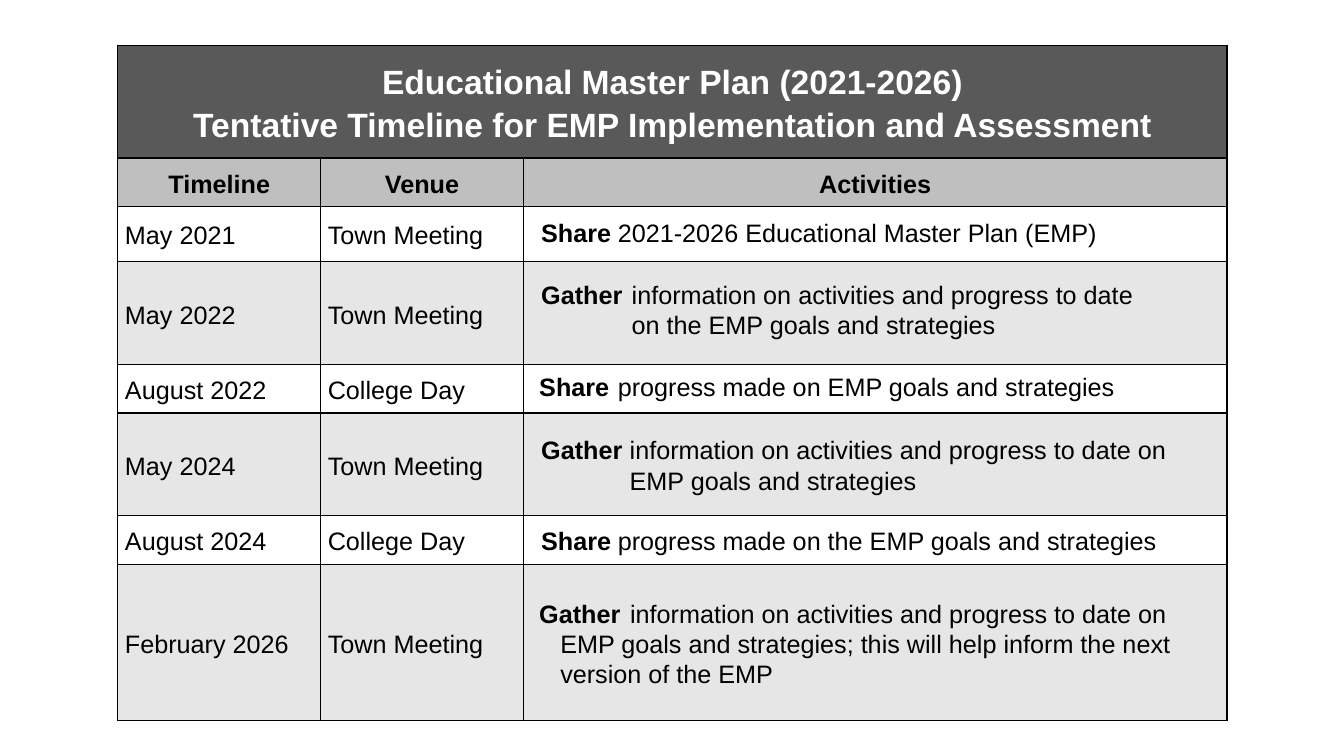
from lxml import etree
from pptx import Presentation
from pptx.dml.color import RGBColor
from pptx.enum import text
from pptx.oxml import ns
from pptx.util import Cm, Pt

COLORS = {"title": "595959", "header": "BFBFBF", "band": "E7E6E6",
          "white": "FFFFFF", "black": "000000"}
TITLE = ["Educational Master Plan (2021-2026)",
         "Tentative Timeline for EMP Implementation and Assessment"]
HEADINGS = ["Timeline", "Venue", "Activities"]

# All lengths in cm. verb: left, text; detail: left, width, first-line indent, lines
MILESTONES = [
    dict(date="May 2021", venue="Town Meeting", height=1.4, top=5.36,
         verb=(13.39, "Share"),
         detail=(15.32, 12.7, 0, ["2021-2026 Educational Master Plan (EMP)"])),
    dict(date="May 2022", venue="Town Meeting", height=2.59, top=6.91,
         verb=(13.39, "Gather"),
         detail=(15.67, 17.75, 0, ["information on activities and progress to date",
                                   "on the EMP goals and strategies"])),
    dict(date="August 2022", venue="College Day", height=1.22, top=9.23,
         verb=(13.34, "Share"),
         detail=(15.32, 13.16, 0, ["progress made on EMP goals and strategies"])),
    dict(date="May 2024", venue="Town Meeting", height=2.59, top=10.83,
         verb=(13.39, "Gather"),
         detail=(15.62, 14.15, 0, ["information on activities and progress to date on",
                                   "EMP goals and strategies"])),
    dict(date="August 2024", venue="College Day", height=1.22, top=13.11,
         verb=(13.39, "Share"),
         detail=(15.32, 14.22, 0, ["progress made on the EMP goals and strategies"])),
    dict(date="February 2026", venue="Town Meeting", height=3.94, top=14.94,
         verb=(13.34, "Gather"),
         detail=(13.87, 16.08, 1.76,
                 ["information on activities and progress to date on",
                  "EMP goals and strategies; this will help inform the next",
                  "version of the EMP"])),
]
TABLE_LEFT, TABLE_TOP = 2.97, 1.14
COLUMN_WIDTHS = [5.11, 5.11, 17.73]
ROW_HEIGHTS = [2.84, 1.22] + [m["height"] for m in MILESTONES]
VERB_WIDTH, LINE_HEIGHT, BOX_PADDING = 2.7, 0.77, 0.25


def write(frame, lines, size=18, bold=False, color="black", align="LEFT",
          spacing=None, first_indent=0):
    for number, line in enumerate(lines):
        paragraph = frame.add_paragraph() if number else frame.paragraphs[0]
        paragraph.alignment = getattr(text.PP_ALIGN, align)
        paragraph.line_spacing = spacing
        if first_indent and number == 0:
            paragraph._p.get_or_add_pPr().set("indent", str(Cm(first_indent)))
        run = paragraph.add_run()
        run.text = line
        run.font.name = "Arial"
        run.font.size = Pt(size)
        run.font.bold = bold
        run.font.color.rgb = RGBColor.from_string(COLORS[color])


def style_cell(cell, fill):
    """Set the margins, black borders and fill of one cell."""
    cell.margin_left = cell.margin_right = Cm(0.18)
    cell.margin_top = cell.margin_bottom = 0
    cell.vertical_anchor = text.MSO_ANCHOR.MIDDLE
    properties = cell._tc.get_or_add_tcPr()
    for side in ("a:lnL", "a:lnR", "a:lnT", "a:lnB"):
        border = etree.SubElement(properties, ns.qn(side), w=str(Pt(1)))
        solid = etree.SubElement(border, ns.qn("a:solidFill"))
        etree.SubElement(solid, ns.qn("a:srgbClr"), val=COLORS["black"])
    cell.fill.solid()
    cell.fill.fore_color.rgb = RGBColor.from_string(COLORS[fill])


def add_timeline(slide):
    table = slide.shapes.add_table(
        len(ROW_HEIGHTS), len(COLUMN_WIDTHS), Cm(TABLE_LEFT), Cm(TABLE_TOP),
        Cm(sum(COLUMN_WIDTHS)), Cm(sum(ROW_HEIGHTS))).table
    table.first_row = table.horz_banding = False
    for column, width in zip(table.columns, COLUMN_WIDTHS):
        column.width = Cm(width)
    fills = ["title", "header"] + ["white", "band"] * (len(MILESTONES) // 2)
    for row, height, fill in zip(table.rows, ROW_HEIGHTS, fills):
        row.height = Cm(height)
        for cell in row.cells:
            style_cell(cell, fill)

    table.cell(0, 0).merge(table.cell(0, len(COLUMN_WIDTHS) - 1))
    write(table.cell(0, 0).text_frame, TITLE, size=24, bold=True, color="white",
          align="CENTER", spacing=1.15)
    for column, heading in enumerate(HEADINGS):
        write(table.cell(1, column).text_frame, [heading], bold=True,
              align="CENTER", spacing=1.15)
    for row, milestone in enumerate(MILESTONES, start=2):
        for column, key in enumerate(("date", "venue")):
            write(table.cell(row, column).text_frame, [milestone[key]], spacing=1.15)


def add_label(slide, left, top, width, lines, **style):
    height = LINE_HEIGHT * len(lines) + BOX_PADDING
    frame = slide.shapes.add_textbox(Cm(left), Cm(top), Cm(width), Cm(height)).text_frame
    frame.word_wrap = True
    frame.auto_size = text.MSO_AUTO_SIZE.SHAPE_TO_FIT_TEXT
    write(frame, lines, **style)


def main():
    deck = Presentation()
    deck.slide_width, deck.slide_height = Cm(33.87), Cm(19.05)
    slide = deck.slides.add_slide(deck.slide_layouts[6])
    add_timeline(slide)
    for milestone in MILESTONES:
        verb_left, verb = milestone["verb"]
        left, width, indent, lines = milestone["detail"]
        add_label(slide, verb_left, milestone["top"], VERB_WIDTH, [verb], bold=True)
        add_label(slide, left, milestone["top"], width, lines, first_indent=indent)
    deck.save("out.pptx")


if __name__ == "__main__":
    main()
